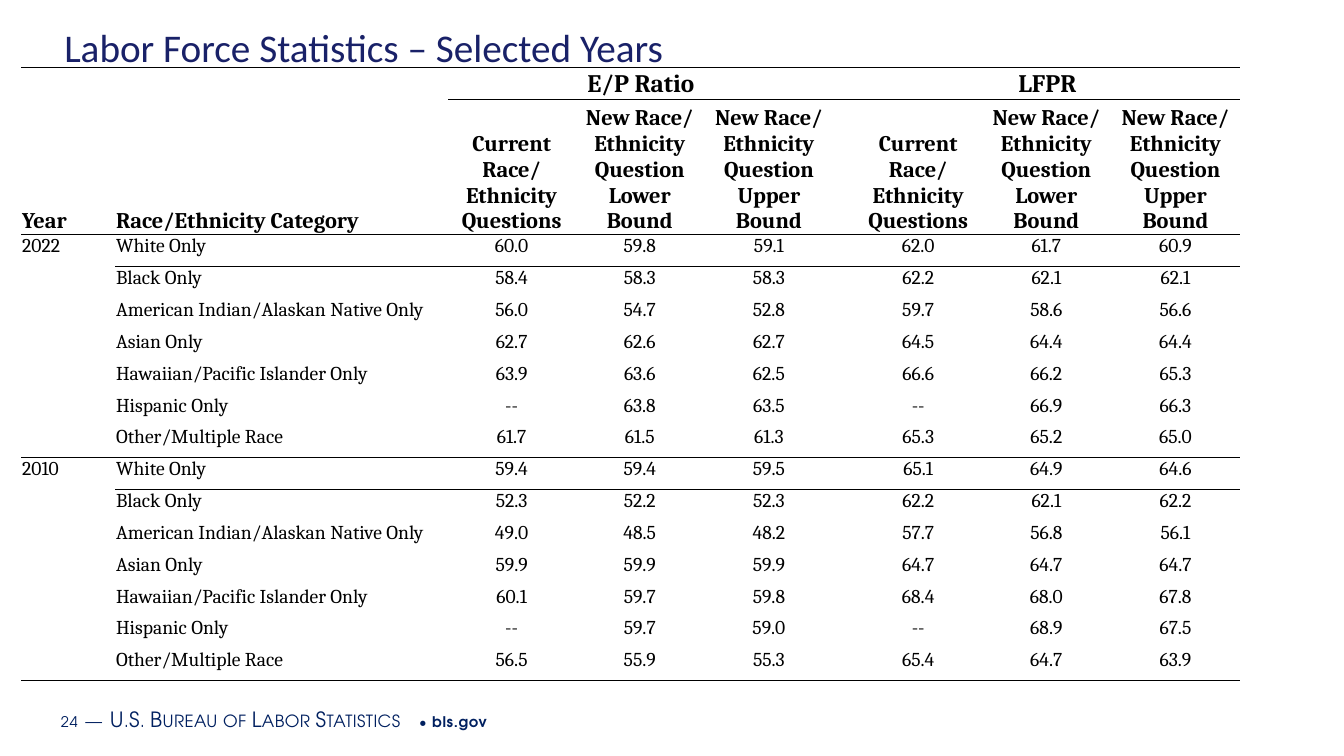
import lxml.etree
import pptx
import pptx.dml.color
import pptx.enum.text
import pptx.oxml.ns
import pptx.util

Inches = pptx.util.Inches
Pt = pptx.util.Pt
qn = pptx.oxml.ns.qn
align = pptx.enum.text.PP_ALIGN
anchor = pptx.enum.text.MSO_ANCHOR


def color(hex_code):
    return pptx.dml.color.RGBColor.from_string(hex_code)


def write(paragraph, text, size=14, face="Cambria", ink="000000", bold=False,
          alignment=align.LEFT, spacing=0, small_caps=False):
    paragraph.alignment = alignment
    for position, line in enumerate(text.split("\n")):
        if position:
            paragraph.add_line_break()
        if line:
            run = paragraph.add_run()
            run.text = line
            run.font.size, run.font.name, run.font.bold = Pt(size), face, bold
            run.font.color.rgb = color(ink)
            properties = run.font._element
            if spacing:
                properties.set("spc", str(int(spacing * 100)))
            if small_caps:
                properties.set("cap", "small")
    paragraph._p.get_or_add_endParaRPr().set("sz", str(int(size * 100)))


deck = pptx.Presentation()
deck.slide_width, deck.slide_height = Inches(13.33), Inches(7.5)
wide, high = deck.slide_width, deck.slide_height
slide = deck.slides.add_slide(deck.slide_layouts[6])

footer = slide.shapes.add_textbox(int(wide * 0.04), int(high * 0.924),
                                  int(wide * 0.635), int(high * 0.053)).text_frame
footer.word_wrap = True
footer.vertical_anchor = anchor.MIDDLE
footer.margin_left = footer.margin_right = Inches(0.07)
footer.margin_top = footer.margin_bottom = Inches(0.04)
caps = dict(size=15, spacing=0.3, small_caps=True)
plain = dict(size=10.5, spacing=0.5)
gap = dict(size=16, spacing=0.5)
for text, look in [("24", plain), (" ", gap), ("—", caps), (" ", gap),
                   ("U.S. Bureau of Labor Statistics", caps), (" • ", plain),
                   ("bls.gov", dict(plain, bold=True))]:
    write(footer.paragraphs[0], text, face="TeX Gyre Adventor", ink="002060", **look)

title = slide.shapes.add_textbox(int(wide * 0.0405), int(high * 0.024),
                                 int(wide * 0.919), int(high * 0.117)).text_frame
title.word_wrap = True
write(title.paragraphs[0], "Labor Force Statistics – Selected Years",
      size=28, face="Calibri", ink="192168")

categories = ["White Only", "Black Only", "American Indian/Alaskan Native Only",
              "Asian Only", "Hawaiian/Pacific Islander Only", "Hispanic Only",
              "Other/Multiple Race"]
rates = {
    "2022": ["60.0 59.8 59.1 62.0 61.7 60.9", "58.4 58.3 58.3 62.2 62.1 62.1",
             "56.0 54.7 52.8 59.7 58.6 56.6", "62.7 62.6 62.7 64.5 64.4 64.4",
             "63.9 63.6 62.5 66.6 66.2 65.3", "-- 63.8 63.5 -- 66.9 66.3",
             "61.7 61.5 61.3 65.3 65.2 65.0"],
    "2010": ["59.4 59.4 59.5 65.1 64.9 64.6", "52.3 52.2 52.3 62.2 62.1 62.2",
             "49.0 48.5 48.2 57.7 56.8 56.1", "59.9 59.9 59.9 64.7 64.7 64.7",
             "60.1 59.7 59.8 68.4 68.0 67.8", "-- 59.7 59.0 -- 68.9 67.5",
             "56.5 55.9 55.3 65.4 64.7 63.9"],
}
questions = ["Current Race/ Ethnicity Questions",
             "New Race/ Ethnicity Question\nLower Bound",
             "New Race/ Ethnicity Question\nUpper Bound"]
rows = [["", "", "E/P Ratio", "", "", "", "LFPR", "", ""],
        ["Year", "Race/Ethnicity Category", *questions, "", *questions]]
for year, lines in rates.items():
    for category, line in zip(categories, lines):
        values = line.split()
        rows.append([year if category == categories[0] else "", category,
                     *values[:3], "", *values[3:]])

column_shares = [93, 330, 126, 128, 128, 21, 126, 128, 128]
row_shares = [30, 128] + [31.6] * 14
table_wide, table_high = wide * 0.907, high * 0.8
table = slide.shapes.add_table(len(rows), len(column_shares), int(wide * 0.0158),
                               int(high * 0.0895), int(table_wide), int(table_high)).table
table.first_row = table.horz_banding = False
table._tbl.tblPr.find(qn("a:tableStyleId")).text = "{2D5ABB26-0587-4C30-8999-92F81FD0307C}"
for column, share in zip(table.columns, column_shares):
    column.width = int(table_wide * share / sum(column_shares))
for row, share in zip(table.rows, row_shares):
    row.height = int(table_high * share / sum(row_shares))

for column in (2, 6):
    table.cell(0, column).merge(table.cell(0, column + 2))
year_rows = (2, 9)
for row in year_rows:
    table.cell(row, 0).merge(table.cell(row + 6, 0))

ruled_rows = (-1, 0, 1, 8, 15)
for r, texts in enumerate(rows):
    for c, text in enumerate(texts):
        cell = table.cell(r, c)
        cell.margin_left = cell.margin_right = cell.margin_top = Inches(0.01)
        cell.margin_bottom = 0
        cell.vertical_anchor = anchor.BOTTOM if r < 2 else anchor.TOP
        cell.fill.background()
        write(cell.text_frame.paragraphs[0], text, size={0: 18, 1: 16}.get(r, 14) if text else 14,
              bold=r < 2, alignment=align.CENTER if c > 1 else align.LEFT)
        edges = []
        if r - 1 in ruled_rows and not (r == 1 and c < 2):
            edges.append("a:lnT")
        if (r in ruled_rows and not (r == 0 and c < 2)) or (c == 0 and r in year_rows):
            edges.append("a:lnB")
        for place, edge in enumerate(edges):
            rule = lxml.etree.Element(qn(edge), w=str(Pt(0.5)))
            ink = lxml.etree.SubElement(rule, qn("a:solidFill"))
            lxml.etree.SubElement(ink, qn("a:srgbClr"), val="000000")
            cell._tc.get_or_add_tcPr().insert(place, rule)

deck.save("out.pptx")
